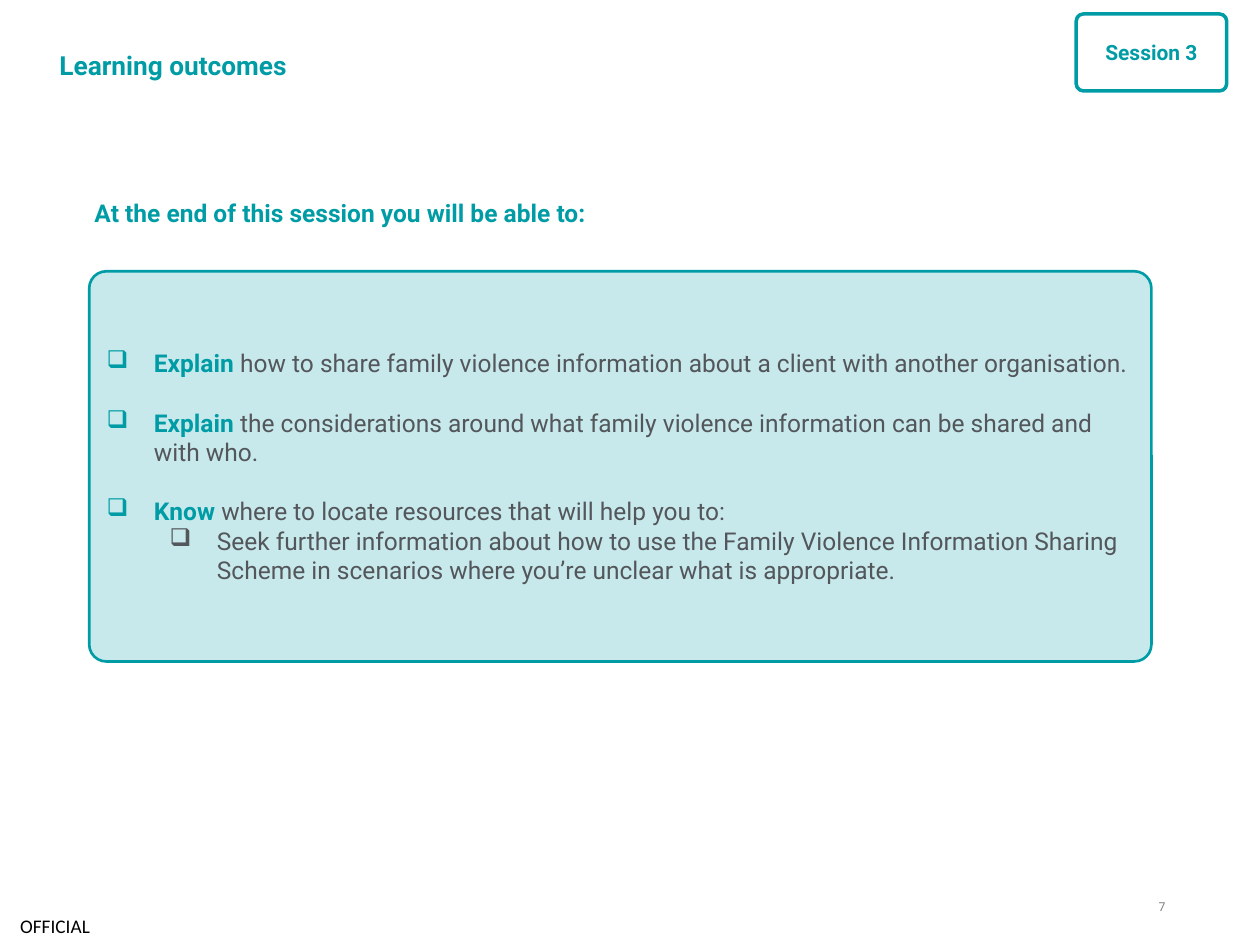
from lxml import etree
from pptx import Presentation
from pptx.dml.color import RGBColor
from pptx.enum.shapes import MSO_SHAPE
from pptx.enum.text import MSO_ANCHOR, MSO_AUTO_SIZE, PP_ALIGN
from pptx.oxml.ns import qn
from pptx.util import Pt

ROUNDED = MSO_SHAPE.ROUNDED_RECTANGLE
MIDDLE, TOP = MSO_ANCHOR.MIDDLE, MSO_ANCHOR.TOP
LEFT, CENTER, RIGHT = PP_ALIGN.LEFT, PP_ALIGN.CENTER, PP_ALIGN.RIGHT

THEME = {
    "font": "Roboto", "label_font": "Calibri",
    "teal": "009CA6", "grey": "53565A", "muted": "7F7F7F",
    "black": "000000", "white": "FFFFFF", "panel_alpha": 22,
    "title": 15, "body": 14, "badge": 12, "label": 11, "number": 7,
}
TITLE = "Learning outcomes"
SESSION = "Session 3"
INTRO = "At the end of this session you will be able to:"
CLASSIFICATION = "OFFICIAL"
PAGE_NUMBER = "7"
BULLET = "❑"
OUTCOMES = [
    (0, "Explain ", "how to share family violence information about a client with another organisation."),
    (0, "Explain ", "the considerations around what family violence information can be shared and with who."),
    (0, "Know ", "where to locate resources that will help you to:"),
    (1, "", "Seek further information about how to use the Family Violence Information Sharing "
            "Scheme in scenarios where you’re unclear what is appropriate."),
]
HANGING, LEVEL_STEP, OUTCOME_GAP = 27, 36, 17


def points(*values):
    return [Pt(value) for value in values]


def color(name):
    return RGBColor.from_string(THEME[name])


def style(font, size, color_name, bold=False, face="font"):
    font.name = THEME[face]
    font.size = Pt(THEME[size])
    font.bold = bold
    font.color.rgb = color(color_name)


def set_frame(frame, margins, anchor):
    frame.word_wrap = True
    frame.auto_size = MSO_AUTO_SIZE.NONE
    frame.vertical_anchor = anchor
    frame.margin_left, frame.margin_top, frame.margin_right, frame.margin_bottom = points(*margins)


def write(frame, text, size, color_name, bold=False, face="font", align=LEFT,
          margins=(0, 0, 0, 0), anchor=MIDDLE, after=0):
    set_frame(frame, margins, anchor)
    frame.text = text
    paragraph = frame.paragraphs[0]
    paragraph.alignment = align
    paragraph.space_after = Pt(after)
    style(paragraph.runs[0].font, size, color_name, bold, face)


def add_rounded(slide, box, corner, fill, line_width):
    shape = slide.shapes.add_shape(ROUNDED, *points(*box))
    shape.shadow.inherit = False
    shape.adjustments[0] = corner
    shape.fill.solid()
    shape.fill.fore_color.rgb = color(fill)
    shape.line.color.rgb = color("teal")
    shape.line.width = Pt(line_width)
    return shape


def set_bullet(paragraph, level):
    paragraph.level = level
    properties = paragraph._p.get_or_add_pPr()
    properties.set("marL", str(Pt(HANGING + level * LEVEL_STEP)))
    properties.set("indent", str(-Pt(HANGING)))
    etree.SubElement(properties, qn("a:buChar")).set("char", BULLET)


def add_outcomes(slide, box):
    panel = add_rounded(slide, box, 0.044, "teal", 1.5)
    fill_color = panel._element.spPr.find(qn("a:solidFill"))[0]
    etree.SubElement(fill_color, qn("a:alpha")).set("val", str(THEME["panel_alpha"] * 1000))
    frame = panel.text_frame
    set_frame(frame, (7.2, 3.6, 7.2, 3.6), MIDDLE)
    for index, (level, verb, rest) in enumerate(OUTCOMES):
        paragraph = frame.add_paragraph() if index else frame.paragraphs[0]
        paragraph.alignment = LEFT
        paragraph.space_before = Pt(OUTCOME_GAP if index and level == 0 else 0)
        set_bullet(paragraph, level)
        for text, color_name, bold in ((verb, "teal", True), (rest, "grey", False)):
            if text:
                run = paragraph.add_run()
                run.text = text
                style(run.font, "body", color_name, bold)


def main():
    presentation = Presentation()
    presentation.slide_width, presentation.slide_height = points(720, 540)
    slide = presentation.slides.add_slide(presentation.slide_layouts[5])

    title = slide.shapes.title
    title.left, title.top, title.width, title.height = points(34, 13.5, 538.5, 47)
    write(title.text_frame, TITLE, "title", "teal", True, after=3.4)

    table = slide.shapes.add_table(1, 1, *points(51, 111, 623, 44)).table
    table.first_row = table.horz_banding = False
    cell = table.cell(0, 0)
    cell.fill.solid()
    cell.fill.fore_color.rgb = color("white")
    cell.text = INTRO
    cell.vertical_anchor = TOP
    cell.margin_left = cell.margin_top = cell.margin_right = cell.margin_bottom = Pt(3)
    style(cell.text_frame.paragraphs[0].runs[0].font, "body", "teal", True)

    badge = add_rounded(slide, (615, 8, 86, 44), 0.094, "white", 2)
    write(badge.text_frame, SESSION, "badge", "teal", True, align=CENTER,
          margins=(14, 3.6, 14, 3.6), after=6)

    add_outcomes(slide, (51, 155, 607, 223))

    number = slide.shapes.add_textbox(*points(641.5, 514, 24.5, 14.5))
    write(number.text_frame, PAGE_NUMBER, "number", "muted", align=RIGHT, anchor=TOP)

    label = slide.shapes.add_textbox(*points(0, 518, 62.5, 22))
    write(label.text_frame, CLASSIFICATION, "label", "black", face="label_font",
          margins=(11.5, 0, 0, 0))

    presentation.save("out.pptx")


if __name__ == "__main__":
    main()
